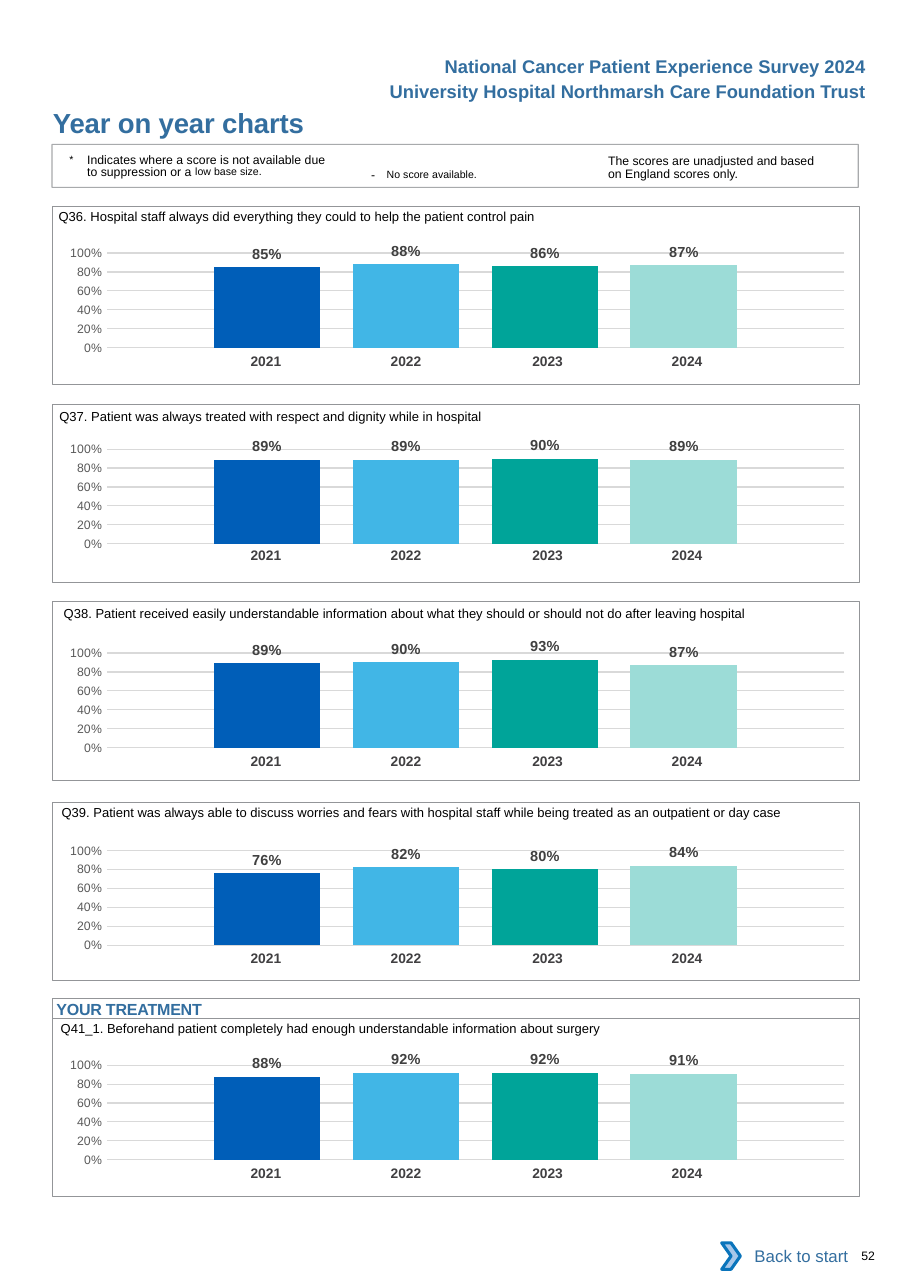
from dataclasses import dataclass

from lxml import etree
from pptx import Presentation
from pptx.chart.data import CategoryChartData
from pptx.dml.color import RGBColor
from pptx.enum.chart import XL_CHART_TYPE, XL_LABEL_POSITION, XL_TICK_MARK
from pptx.enum.shapes import MSO_SHAPE
from pptx.enum.text import MSO_ANCHOR, PP_ALIGN
from pptx.oxml import parse_xml
from pptx.oxml.ns import nsdecls, qn
from pptx.util import Cm, Pt

COLUMN = XL_CHART_TYPE.COLUMN_CLUSTERED
OUTSIDE_END = XL_LABEL_POSITION.OUTSIDE_END
NO_TICK = XL_TICK_MARK.NONE
RECT, CHEVRON = MSO_SHAPE.RECTANGLE, MSO_SHAPE.CHEVRON
LEFT, CENTER, RIGHT = PP_ALIGN.LEFT, PP_ALIGN.CENTER, PP_ALIGN.RIGHT
TOP, MIDDLE = MSO_ANCHOR.TOP, MSO_ANCHOR.MIDDLE

FONT = "Arial"
BLUE, BLACK, GREY = "336E9F", "000000", "939598"
PANEL_LEFT, PANEL_W, PANEL_H = 1.22, 18.59, 4.11
YEARS = ("2021", "2022", "2023", "2024")
YEAR_COLORS = ("005EB8", "41B6E6", "00A499", "9CDCD7")
YEAR_WIDTHS = (3.23, 3.23, 3.4, 3.23)
YEAR_RIGHT_INSETS = (0, 0, 0.1, 0.3)
NO_GRID_STYLE = "{2D5ABB26-0587-4C30-8999-92F81FD0307C}"
PLOT_LAYOUT = {"x": 0.079, "y": 0.145, "w": 0.915, "h": 0.666}


@dataclass
class Run:
    text: str
    size: float = 8
    color: str = BLACK
    bold: bool = False
    baseline: int = 0
    spacing: float = 0


@dataclass
class Label:
    left: float
    top: float
    width: float
    height: float
    runs: list[Run]
    align: PP_ALIGN = LEFT
    insets: tuple[float, float, float, float] = (0, 0, 0, 0)
    line_pt: float = 0
    hanging: float = 0


@dataclass
class Question:
    text: str
    text_left: float
    text_top: float
    panel_top: float
    chart_top: float
    years_top: float
    scores: tuple[float, ...]


LABELS = [
    Label(9.96, 1.15, 10.26, 0.76, [Run("National Cancer Patient Experience Survey 2024", 12, BLUE, True)],
          RIGHT, (0.25, 0.13, 0.25, 0.13)),
    Label(8.28, 1.73, 11.94, 0.76, [Run("University Hospital Northmarsh Care Foundation Trust", 12, BLUE, True)],
          RIGHT, (0.25, 0.13, 0.25, 0.13)),
    Label(1.22, 2.44, 11.43, 0.76, [Run("Year on year charts", 18, BLUE, True, spacing=-0.1)]),
    Label(1.6, 3.51, 6.07, 0.6,
          [Run("*\t", 12, baseline=3), Run("Indicates where a score is not available due to suppression or a "),
           Run("low base size.", 12, baseline=7)], insets=(0, 0.08, 0, 0), line_pt=8.1, hanging=0.41),
    Label(8.31, 3.58, 4.65, 0.61,
          [Run("- ", spacing=2.6), Run("No score available.", 12, baseline=3)], insets=(0.25, 0.13, 0.1, 0.13)),
    Label(14.02, 3.51, 5.11, 0.69, [Run("The scores are unadjusted and based on England scores only.")],
          insets=(0, 0.08, 0, 0), line_pt=8.1),
    Label(19.86, 28.78, 1.04, 0.33, [Run("52")]),
]

QUESTIONS = [
    Question("Q36. Hospital staff always did everything they could to help the patient control pain",
             1.35, 4.57, 4.75, 5.36, 8.03, (0.85, 0.88, 0.86, 0.87)),
    Question("Q37. Patient was always treated with respect and dignity while in hospital",
             1.37, 9.17, 9.32, 9.88, 12.5, (0.89, 0.89, 0.9, 0.89)),
    Question("Q38. Patient received easily understandable information about what they should or should not do"
             " after leaving hospital", 1.47, 13.72, 13.87, 14.58, 17.25, (0.89, 0.9, 0.93, 0.87)),
    Question("Q39. Patient was always able to discuss worries and fears with hospital staff while being treated"
             " as an outpatient or day case", 1.42, 18.31, 18.49, 19.13, 21.79, (0.76, 0.82, 0.8, 0.84)),
    Question("Q41_1. Beforehand patient completely had enough understandable information about surgery",
             1.4, 23.29, 23.47, 24.08, 26.75, (0.88, 0.92, 0.92, 0.91)),
]


def rgb(value: str) -> RGBColor:
    return RGBColor.from_string(value)


def style_font(font, size: float, color: str, bold: bool = False) -> None:
    font.name, font.size, font.bold = FONT, Pt(size), bold
    font.color.rgb = rgb(color)


def write(tf, runs: list[Run], align: PP_ALIGN = LEFT, insets=(0, 0, 0, 0), anchor=TOP):
    tf.word_wrap = True
    tf.vertical_anchor = anchor
    tf.margin_left, tf.margin_top, tf.margin_right, tf.margin_bottom = map(Cm, insets)
    p = tf.paragraphs[0]
    p.alignment = align
    for run in runs:
        r = p.add_run()
        r.text = run.text
        style_font(r.font, run.size, run.color, run.bold)
        rPr = r._r.get_or_add_rPr()
        if run.baseline:
            rPr.set("baseline", str(run.baseline * 1000))
        if run.spacing:
            rPr.set("spc", str(round(run.spacing * 100)))
    return p


def add_label(slide, label: Label) -> None:
    sp = slide.shapes.add_textbox(Cm(label.left), Cm(label.top), Cm(label.width), Cm(label.height))
    p = write(sp.text_frame, label.runs, label.align, label.insets)
    if label.line_pt:
        p.line_spacing = Pt(label.line_pt)
    if label.hanging:
        pPr = p._p.get_or_add_pPr()
        pPr.set("marL", str(Cm(label.hanging)))
        pPr.set("indent", str(-Cm(label.hanging)))


def add_box(slide, left: float, top: float, width: float, height: float, kind: MSO_SHAPE = RECT,
            fill: str = "", line: str = GREY, line_pt: float = 0.5):
    sp = slide.shapes.add_shape(kind, Cm(left), Cm(top), Cm(width), Cm(height))
    sp.shadow.inherit = False
    if fill:
        sp.fill.solid()
        sp.fill.fore_color.rgb = rgb(fill)
    else:
        sp.fill.background()
    if line:
        sp.line.color.rgb = rgb(line)
        sp.line.width = Pt(line_pt)
    else:
        sp.line.fill.background()
    return sp


def add_score_chart(slide, top: float, scores: tuple[float, ...]) -> None:
    data = CategoryChartData(number_format="0%")
    data.categories = ["1"]
    for year, score in zip(YEARS, scores):
        data.add_series(year, [score])
    chart = slide.shapes.add_chart(COLUMN, Cm(0.99), Cm(top), Cm(PANEL_W), Cm(3.28), data).chart
    chart.has_legend = chart.has_title = False
    style_font(chart.font, 8, "595959")
    chart.category_axis.visible = False
    axis = chart.value_axis
    axis.minimum_scale, axis.maximum_scale, axis.major_unit = 0, 1, 0.2
    axis.major_tick_mark = axis.minor_tick_mark = NO_TICK
    axis.format.line.fill.background()
    axis.major_gridlines.format.line.color.rgb = rgb("D9D9D9")
    axis.major_gridlines.format.line.width = Pt(0.75)
    axis.tick_labels.number_format, axis.tick_labels.number_format_is_linked = "0%", False
    style_font(axis.tick_labels.font, 8, "595959")
    plot = chart.plots[0]
    plot.gap_width, plot.overlap, plot.vary_by_categories = 200, -30, False
    for series, color in zip(plot.series, YEAR_COLORS):
        series.format.fill.solid()
        series.format.fill.fore_color.rgb = rgb(color)
        labels = series.data_labels
        labels.show_value, labels.position = True, OUTSIDE_END
        labels.number_format, labels.number_format_is_linked = "0%", False
        style_font(labels.font, 9.5, "404040", True)
    area = chart._chartSpace.chart.plotArea
    for old in area.findall(qn("c:layout")):
        area.remove(old)
    modes = '<c:layoutTarget val="inner"/><c:xMode val="edge"/><c:yMode val="edge"/>'
    sizes = "".join(f'<c:{key} val="{value}"/>' for key, value in PLOT_LAYOUT.items())
    area.insert(0, parse_xml(
        f'<c:layout {nsdecls("c")}><c:manualLayout>{modes}{sizes}</c:manualLayout></c:layout>'))


def add_years(slide, top: float) -> None:
    table = slide.shapes.add_table(1, len(YEARS), Cm(4.39), Cm(top), Cm(sum(YEAR_WIDTHS)), Cm(0.69)).table
    table.first_row = table.horz_banding = False
    table._tbl.tblPr.find(qn("a:tableStyleId")).text = NO_GRID_STYLE
    for i, (year, width, right) in enumerate(zip(YEARS, YEAR_WIDTHS, YEAR_RIGHT_INSETS)):
        table.columns[i].width = Cm(width)
        cell = table.cell(0, i)
        cell.fill.background()
        write(cell.text_frame, [Run(year, 9, "414042", True)], CENTER)
        cell.margin_left, cell.margin_right = Cm(0.25), Cm(right)
        cell.margin_top = cell.margin_bottom = Cm(0.13)


def main() -> None:
    prs = Presentation()
    prs.slide_width, prs.slide_height = Cm(20.98), Cm(29.69)
    slide = prs.slides.add_slide(prs.slide_layouts[6])
    frame = add_box(slide, 1.2, 3.33, PANEL_W, 0.99, line_pt=0.75)
    line_color = frame.line._ln.find(".//" + qn("a:srgbClr"))
    etree.SubElement(line_color, qn("a:alpha")).set("val", "80000")
    for label in LABELS:
        add_label(slide, label)
    heading = add_box(slide, PANEL_LEFT, 23.01, PANEL_W, 0.46)
    write(heading.text_frame, [Run("YOUR TREATMENT", 10.5, BLUE, True, spacing=-0.1)], insets=(0.08, 0.03, 0, 0))
    for q in QUESTIONS:
        add_box(slide, PANEL_LEFT, q.panel_top, PANEL_W, PANEL_H)
        add_score_chart(slide, q.chart_top, q.scores)
        add_years(slide, q.years_top)
        add_label(slide, Label(q.text_left, q.text_top, 18.3, 0.61, [Run(q.text, 8.5)], insets=(0, 0.24, 0, 0)))
    back = add_box(slide, 16.81, 28.42, 3, 1.07, fill="FFFFFF", line="")
    write(back.text_frame, [Run("Back to start", 11, BLUE)], RIGHT, (0.25, 0.13, 0.25, 0.13), MIDDLE)
    add_box(slide, 16.64, 28.65, 0.43, 0.61, CHEVRON, "A8C7E9", "0A74BB", 2)
    prs.save("out.pptx")


if __name__ == "__main__":
    main()
